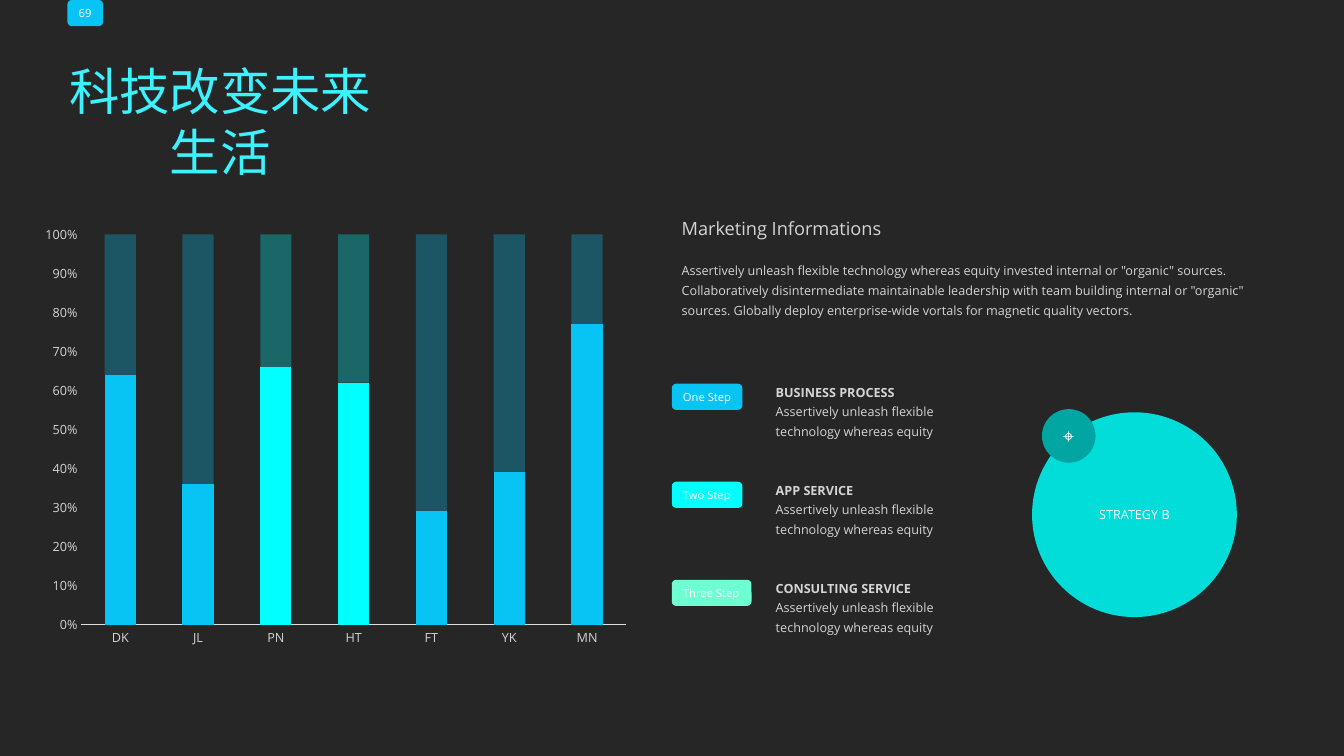
"""Build a dark marketing slide with a 100% column chart, three steps and a strategy circle."""
from lxml import etree
from pptx import Presentation
from pptx.chart.data import CategoryChartData
from pptx.dml.color import RGBColor
from pptx.enum.chart import XL_CHART_TYPE as ChartType, XL_TICK_MARK as Tick
from pptx.enum.shapes import MSO_SHAPE as Shape
from pptx.enum.text import MSO_ANCHOR as Anchor, PP_ALIGN as Align
from pptx.oxml.ns import qn
from pptx.util import Cm, Pt

BLUE, CYAN, MINT = "08C4F5", "02FFFF", "6DFFD1"
WHITE, GREY, DARK = "FFFFFF", "D4D4D4", "262626"
SANS = "Open Sans"


def paint(target, color):
    target.solid()
    target.fore_color.rgb = RGBColor.from_string(color)


def write(frame, lines, color, align=Align.LEFT, spacing=None, wrap=True):
    frame.word_wrap = wrap
    frame.text = "\n".join(text for text, *_ in lines)
    for paragraph, (_, size, bold, face) in zip(frame.paragraphs, lines):
        paragraph.alignment = align
        paragraph.line_spacing = spacing
        font = paragraph.runs[0].font
        font.size, font.bold, font.name = Pt(size), bold, face
        font.color.rgb = RGBColor.from_string(color)
        for tag in ("a:ea", "a:sym"):
            etree.SubElement(paragraph.runs[0].font._element, qn(tag)).set("typeface", face)


deck = Presentation()
deck.slide_width, deck.slide_height = Cm(33.87), Cm(19.05)
slide = deck.slides.add_slide(deck.slide_layouts[6])
paint(slide.background.fill, DARK)
shapes = slide.shapes

shares = {"DK": 64, "JL": 36, "PN": 66, "HT": 62, "FT": 29, "YK": 39, "MN": 77}
highlighted = ("PN", "HT")
share_data = CategoryChartData()
share_data.categories = list(shares)
share_data.add_series("Series 1", list(shares.values()))
share_data.add_series("Series 2", [100 - share for share in shares.values()])
chart = shapes.add_chart(ChartType.COLUMN_STACKED_100, Cm(0.84), Cm(5.46),
                         Cm(15.24), Cm(11.05), share_data).chart
chart.has_legend = chart.has_title = False
chart.font.size, chart.font.name = Pt(10), SANS

plot = chart.plots[0]
plot.gap_width, plot.overlap, plot.vary_by_categories = 150, 100, False
for series, base, opacity in zip(plot.series, (BLUE, CYAN), (100, 30)):
    paint(series.format.fill, base)
    for index, name in enumerate(shares):
        column = series.points[index].format.fill
        paint(column, CYAN if name in highlighted else BLUE)
        if opacity < 100:
            tint = column._xPr.find(".//" + qn("a:srgbClr"))
            etree.SubElement(tint, qn("a:alpha")).set("val", str(opacity * 1000))

categories, percents = chart.category_axis, chart.value_axis
for axis in (categories, percents):
    axis.has_major_gridlines = False
    axis.major_tick_mark = axis.minor_tick_mark = Tick.NONE
    labels = axis.tick_labels.font
    labels.size, labels.name = Pt(9), SANS
    labels.color.rgb = RGBColor.from_string(GREY)
paint(categories.format.line.fill, "DEDEDE")
categories.format.line.width = Pt(0.75)
percents.format.line.fill.background()
percents.minimum_scale, percents.maximum_scale, percents.major_unit = 0, 1, 0.1
percents.tick_labels.number_format = "0%"
percents.tick_labels.number_format_is_linked = False

intro = shapes.add_textbox(Cm(16.93), Cm(5.18), Cm(15.24), Cm(2.97)).text_frame
write(intro, [
    ("Marketing Informations", 13, False, SANS),
    ('Assertively unleash flexible technology whereas equity invested internal or "organic" '
     'sources. Collaboratively disintermediate maintainable leadership with team building '
     'internal or "organic" sources. Globally deploy enterprise-wide vortals for magnetic '
     'quality vectors.', 9, False, SANS),
], GREY, spacing=1.3)
intro.paragraphs[0].space_after = Pt(14)

steps = [
    ("One Step", 1.78, BLUE, "BUSINESS PROCESS"),
    ("Two Step", 1.78, CYAN, "APP SERVICE"),
    ("Three Step", 2.01, MINT, "CONSULTING SERVICE"),
]
tags = [("69", 1.7, 0, 0.9, BLUE)]
for row, (label, width, color, service) in enumerate(steps):
    top = 9.67 + row * 2.47
    tags.append((label, 16.93, top, width, color))
    detail = shapes.add_textbox(Cm(19.3), Cm(top - 0.22), Cm(5.51), Cm(1.75))
    write(detail.text_frame, [
        (service, 9, True, SANS),
        ("Assertively unleash flexible technology whereas equity", 9, False, SANS),
    ], GREY, spacing=1.3)

for label, left, top, width, color in tags:
    tag = shapes.add_shape(Shape.ROUNDED_RECTANGLE, Cm(left), Cm(top), Cm(width), Cm(0.66))
    tag.shadow.inherit = False
    paint(tag.fill, color)
    tag.line.fill.background()
    write(tag.text_frame, [(label, 8, False, SANS)], WHITE, wrap=False)

circles = [
    ("STRATEGY B", 26.01, 10.39, 5.16, "02DDDA", 9, SANS),
    ("⌖", 26.26, 10.31, 1.35, "01A6A3", 14, "Arial"),
]
for label, left, top, size, color, points, face in circles:
    circle = shapes.add_shape(Shape.OVAL, Cm(left), Cm(top), Cm(size), Cm(size))
    circle.shadow.inherit = False
    paint(circle.fill, color)
    circle.line.fill.background()
    circle.text_frame.vertical_anchor = Anchor.MIDDLE
    write(circle.text_frame, [(label, points, False, face)], WHITE, Align.CENTER)

title = shapes.add_textbox(Cm(1.45), Cm(1.4), Cm(8.2), Cm(1.8))
write(title.text_frame, [("科技改变未来生活", 36, False, "Noto Sans CJK SC")], "3CF2FF", Align.CENTER)

deck.save("out.pptx")
